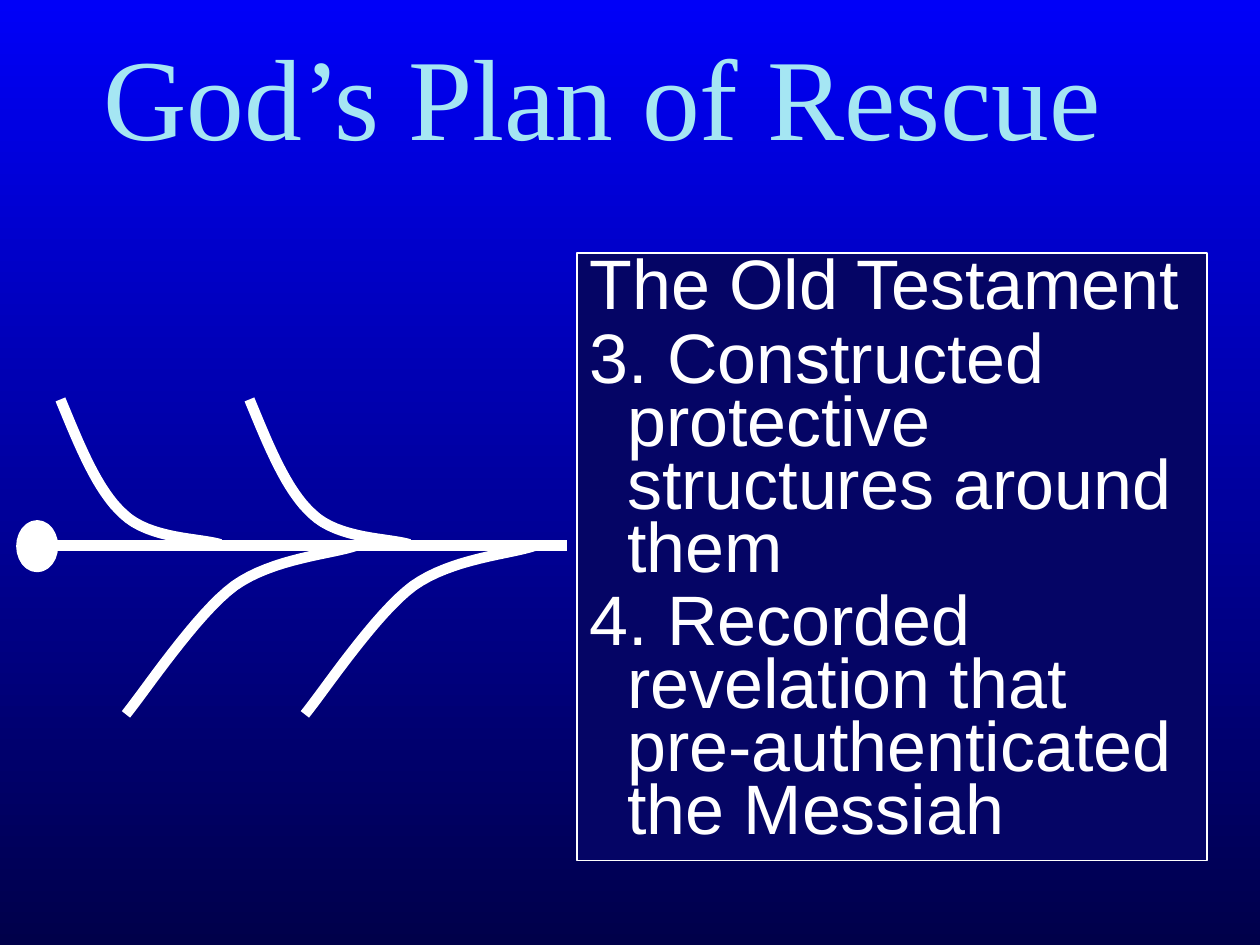
from lxml import etree
from pptx import Presentation
from pptx.dml.color import RGBColor
from pptx.enum.shapes import MSO_CONNECTOR, MSO_SHAPE
from pptx.enum.text import MSO_ANCHOR, PP_ALIGN
from pptx.oxml.ns import qn
from pptx.util import Inches, Pt

STRAIGHT = MSO_CONNECTOR.STRAIGHT
OVAL, RECTANGLE = MSO_SHAPE.OVAL, MSO_SHAPE.RECTANGLE
MIDDLE, TOP = MSO_ANCHOR.MIDDLE, MSO_ANCHOR.TOP
CENTER, LEFT = PP_ALIGN.CENTER, PP_ALIGN.LEFT

WHITE = RGBColor(0xFF, 0xFF, 0xFF)
PALE_CYAN = RGBColor(0xA5, 0xE6, 0xF3)
NAVY = RGBColor(0x05, 0x05, 0x65)
BRIGHT_BLUE = RGBColor(0x00, 0x00, 0xF8)
DARK_BLUE = RGBColor(0x00, 0x00, 0x4A)

WIDTH, HEIGHT = 10, 7.5
TITLE_BOX = (0.33, 0.23, 8.9, 1.25)
TIMELINE_BOX = (0.17, 3.17, 4.33, 2.5)
PANEL_BOX = (4.58, 2.01, 5, 4.82)

UPPER_CURVE = [(0, 0), (0.15, 0.36), (0.29, 0.72), (0.5, 0.91),
               (0.71, 1.11), (1.11, 1.1), (1.27, 1.15)]
LOWER_CURVE = [(0, 1.34), (0.14, 1.17), (0.56, 0.54), (0.86, 0.32),
               (1.17, 0.1), (1.63, 0.07), (1.83, 0)]
UPPER_STARTS = (0.31, 1.81)
LOWER_STARTS = (0.83, 2.25)
SPINE_DROP = 1.16
CURVE_STEPS = 16

PANEL_TEXT = [
    "The Old Testament",
    "3. Constructed\vprotective\vstructures around\vthem",
    "4. Recorded\vrevelation that\vpre-authenticated\vthe Messiah",
]


def paint_background(slide):
    """Fill the slide with a gradient running from top to bottom."""
    fill = slide.background.fill
    fill.gradient()
    fill.gradient_angle = 270
    for stop, color in zip(fill.gradient_stops, (BRIGHT_BLUE, DARK_BLUE)):
        stop.color.rgb = color


def place_title(slide, box):
    """Move the title placeholder into the box and format it."""
    title = slide.shapes.title
    title.left, title.top, title.width, title.height = map(Inches, box)
    frame = title.text_frame
    frame.text = "God’s Plan of Rescue"
    frame.vertical_anchor = MIDDLE
    paragraph = frame.paragraphs[0]
    paragraph.alignment = CENTER
    paragraph.line_spacing = 0.8
    font = paragraph.runs[0].font
    font.name, font.size = "Times New Roman", Pt(66)
    font.color.rgb = PALE_CYAN


def style_line(shape, width):
    """Give a shape or connector a white line."""
    shape.line.color.rgb = WHITE
    shape.line.width = Pt(width)


def bezier_point(controls, t):
    """Return the point at t on a cubic curve."""
    weights = ((1 - t) ** 3, 3 * t * (1 - t) ** 2, 3 * t ** 2 * (1 - t), t ** 3)
    return tuple(sum(weight * point[axis] for weight, point in zip(weights, controls))
                 for axis in (0, 1))


def add_branch(slide, left, top, curve):
    """Draw one open branch through the joined cubic curves."""
    points = [curve[0]]
    for first in range(0, len(curve) - 1, 3):
        controls = curve[first:first + 4]
        points += [bezier_point(controls, step / CURVE_STEPS)
                   for step in range(1, CURVE_STEPS + 1)]
    placed = [(Inches(left + x), Inches(top + y)) for x, y in points]
    builder = slide.shapes.build_freeform(*placed[0])
    builder.add_line_segments(placed[1:], close=False)
    branch = builder.convert_to_shape()
    branch.shadow.inherit = False
    branch.fill.background()
    style_line(branch, 6)


def place_timeline(slide, box):
    """Draw the spine, its four branches and the starting dot."""
    left, top, width, _ = box
    spine_top = top + SPINE_DROP
    spine = slide.shapes.add_connector(
        STRAIGHT, Inches(left + 0.16), Inches(spine_top),
        Inches(left + width), Inches(spine_top))
    etree.SubElement(spine.element.spPr, qn("a:effectLst"))
    style_line(spine, 6)
    for start in UPPER_STARTS:
        add_branch(slide, left + start, top, UPPER_CURVE)
    for start in LOWER_STARTS:
        add_branch(slide, left + start, spine_top, LOWER_CURVE)
    dot = slide.shapes.add_shape(OVAL, Inches(left), Inches(spine_top - 0.16),
                                 Inches(0.25), Inches(0.33))
    dot.shadow.inherit = False
    dot.fill.solid()
    dot.fill.fore_color.rgb = WHITE
    style_line(dot, 6)


def place_panel(slide, box):
    """Add the bordered panel with hanging numbered points."""
    panel = slide.shapes.add_shape(RECTANGLE, *map(Inches, box))
    panel.shadow.inherit = False
    panel.fill.solid()
    panel.fill.fore_color.rgb = NAVY
    style_line(panel, 1)
    frame = panel.text_frame
    frame.word_wrap = True
    frame.vertical_anchor = TOP
    for index, text in enumerate(PANEL_TEXT):
        paragraph = frame.paragraphs[0] if index == 0 else frame.add_paragraph()
        paragraph.text = text
        paragraph.alignment = LEFT
        paragraph.line_spacing = 0.75
        paragraph.space_before = Pt(6 if index else 0)
        properties = paragraph._p.get_or_add_pPr()
        properties.set("marL", str(Inches(0.3)))
        properties.set("indent", str(-Inches(0.3)))
        for run in paragraph.runs:
            run.font.name, run.font.size = "Arial", Pt(40)
            run.font.color.rgb = WHITE


def main():
    """Build and save the presentation."""
    presentation = Presentation()
    presentation.slide_width, presentation.slide_height = Inches(WIDTH), Inches(HEIGHT)
    slide = presentation.slides.add_slide(presentation.slide_layouts[5])
    paint_background(slide)
    place_timeline(slide, TIMELINE_BOX)
    place_title(slide, TITLE_BOX)
    place_panel(slide, PANEL_BOX)
    presentation.save("out.pptx")


if __name__ == "__main__":
    main()
